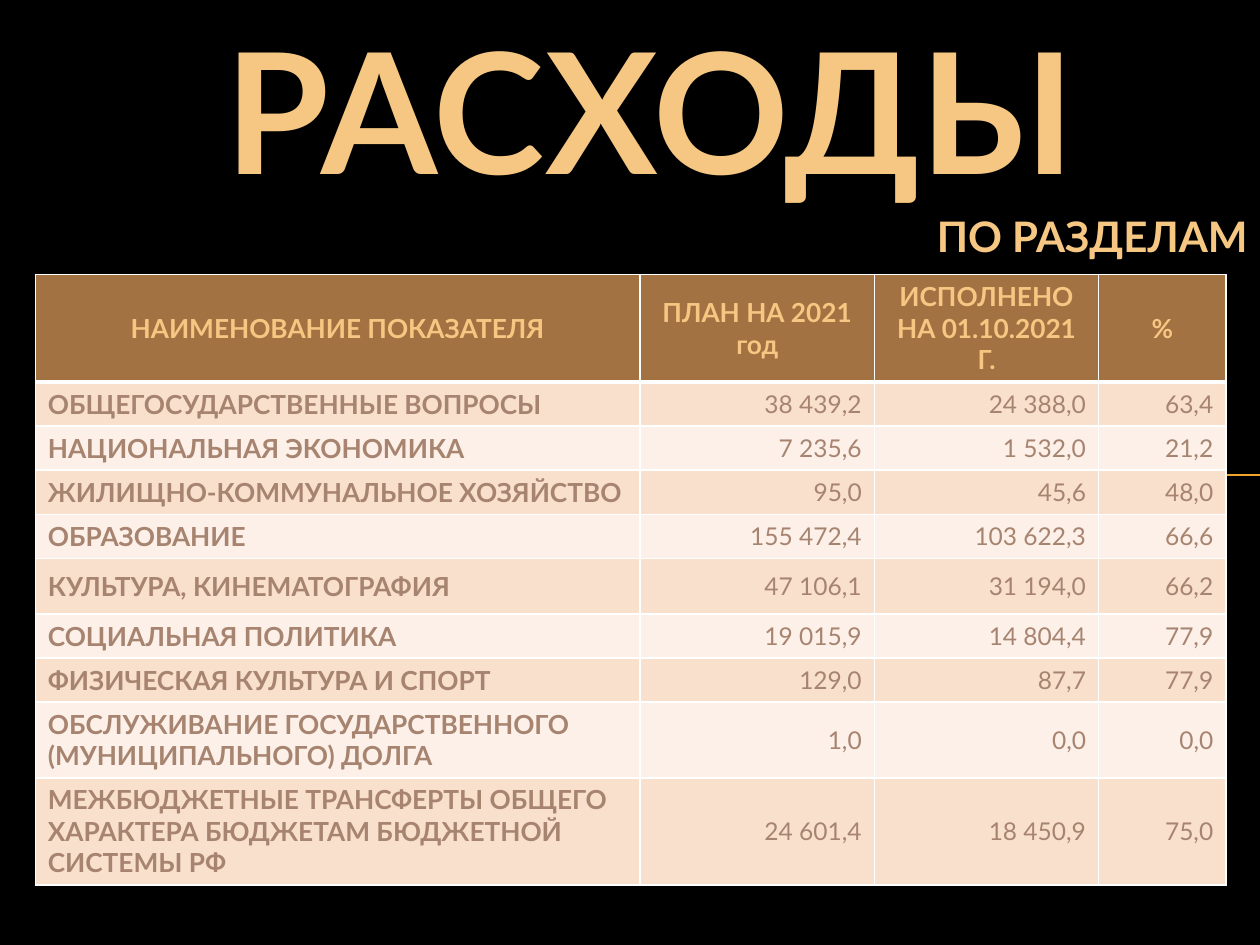
from dataclasses import dataclass

from lxml.etree import SubElement
from pptx import Presentation
from pptx.dml.color import RGBColor
from pptx.enum.shapes import MSO_CONNECTOR
from pptx.enum.text import MSO_ANCHOR, MSO_AUTO_SIZE, PP_ALIGN
from pptx.oxml.ns import qn
from pptx.slide import Slide
from pptx.table import _Cell
from pptx.text.text import TextFrame
from pptx.util import Inches, Pt


@dataclass(frozen=True)
class Theme:
    font: str = "Lato"
    background: str = "000000"
    gold: str = "F6C782"
    rule: str = "F0A22E"
    header_fill: str = "A27242"
    bands: tuple[str, str] = ("F9E0CD", "FCF0E8")
    body_text: str = "A78470"
    border: str = "FFFFFF"
    title_size: int = 96
    subtitle_size: int = 24
    label_size: int = 15
    value_size: int = 14


@dataclass(frozen=True)
class Expense:
    section: str
    plan: str
    done: str
    percent: str
    height: float = 0.35


THEME = Theme()
HEADER = ("НАИМЕНОВАНИЕ ПОКАЗАТЕЛЯ", "ПЛАН НА 2021 год", "ИСПОЛНЕНО НА 01.10.2021 Г.", "%")
HEADER_HEIGHT = 0.85
COLUMN_WIDTHS = (4.8, 1.86, 1.78, 1.01)
EXPENSES = (
    Expense("ОБЩЕГОСУДАРСТВЕННЫЕ ВОПРОСЫ", "38 439,2", "24 388,0", "63,4"),
    Expense("НАЦИОНАЛЬНАЯ ЭКОНОМИКА", "7 235,6", "1 532,0", "21,2"),
    Expense("ЖИЛИЩНО-КОММУНАЛЬНОЕ ХОЗЯЙСТВО", "95,0", "45,6", "48,0"),
    Expense("ОБРАЗОВАНИЕ", "155 472,4", "103 622,3", "66,6"),
    Expense("КУЛЬТУРА, КИНЕМАТОГРАФИЯ", "47 106,1", "31 194,0", "66,2", 0.44),
    Expense("СОЦИАЛЬНАЯ ПОЛИТИКА", "19 015,9", "14 804,4", "77,9"),
    Expense("ФИЗИЧЕСКАЯ КУЛЬТУРА И СПОРТ", "129,0", "87,7", "77,9"),
    Expense("ОБСЛУЖИВАНИЕ ГОСУДАРСТВЕННОГО (МУНИЦИПАЛЬНОГО) ДОЛГА", "1,0", "0,0", "0,0", 0.6),
    Expense("МЕЖБЮДЖЕТНЫЕ ТРАНСФЕРТЫ ОБЩЕГО ХАРАКТЕРА БЮДЖЕТАМ БЮДЖЕТНОЙ СИСТЕМЫ РФ",
            "24 601,4", "18 450,9", "75,0", 0.85),
)


def write(frame: TextFrame, text: str, size: int, color: str,
          align: PP_ALIGN, bold: bool = True) -> None:
    frame.text = text
    frame.word_wrap = True
    for paragraph in frame.paragraphs:
        paragraph.alignment = align
        for run in paragraph.runs:
            run.font.name = THEME.font
            run.font.size = Pt(size)
            run.font.bold = bold
            run.font.color.rgb = RGBColor.from_string(color)


def set_borders(cell: _Cell, top: float = 1, bottom: float = 1) -> None:
    """Draw the cell's edges; call before filling, as the schema puts lines first."""
    properties = cell._tc.get_or_add_tcPr()
    for edge, width in (("lnL", 1), ("lnR", 1), ("lnT", top), ("lnB", bottom)):
        line = SubElement(properties, qn(f"a:{edge}"), w=str(Pt(width)))
        fill = SubElement(line, qn("a:solidFill"))
        SubElement(fill, qn("a:srgbClr"), val=THEME.border)


def fill_cell(cell: _Cell, color: str) -> None:
    cell.vertical_anchor = MSO_ANCHOR.MIDDLE
    cell.fill.solid()
    cell.fill.fore_color.rgb = RGBColor.from_string(color)


def add_rule(slide: Slide) -> None:
    rule = slide.shapes.add_connector(
        MSO_CONNECTOR.STRAIGHT, Inches(0.56), Inches(3.77), Inches(10), Inches(3.77))
    rule.line.color.rgb = RGBColor.from_string(THEME.rule)
    rule.line.width = Pt(0.75)
    SubElement(rule._element.spPr, qn("a:effectLst"))


def add_headings(slide: Slide) -> None:
    title = slide.shapes.title
    title.left, title.top = Inches(0.91), Inches(0)
    title.width, title.height = Inches(8.5), Inches(1.49)
    write(title.text_frame, "РАСХОДЫ", THEME.title_size, THEME.gold, PP_ALIGN.CENTER)
    title.text_frame.auto_size = MSO_AUTO_SIZE.NONE
    title.text_frame.vertical_anchor = MSO_ANCHOR.TOP

    subtitle = slide.shapes.add_textbox(Inches(3.7), Inches(1.62), Inches(6.3), Inches(0.5))
    write(subtitle.text_frame, "ПО РАЗДЕЛАМ", THEME.subtitle_size, THEME.gold, PP_ALIGN.RIGHT)


def add_expense_table(slide: Slide) -> None:
    heights = [HEADER_HEIGHT] + [expense.height for expense in EXPENSES]
    table = slide.shapes.add_table(
        len(heights), len(HEADER), Inches(0.28), Inches(2.18),
        Inches(sum(COLUMN_WIDTHS)), Inches(sum(heights))).table
    for column, width in zip(table.columns, COLUMN_WIDTHS):
        column.width = Inches(width)
    for row, height in zip(table.rows, heights):
        row.height = Inches(height)

    for cell, caption in zip(table.rows[0].cells, HEADER):
        set_borders(cell, bottom=3)
        fill_cell(cell, THEME.header_fill)
        write(cell.text_frame, caption, THEME.label_size, THEME.gold, PP_ALIGN.CENTER)

    for index, expense in enumerate(EXPENSES):
        values = (expense.section, expense.plan, expense.done, expense.percent)
        for column, value in enumerate(values):
            cell = table.cell(index + 1, column)
            set_borders(cell, top=3 if index == 0 else 1)
            fill_cell(cell, THEME.bands[index % 2])
            is_label = column == 0
            write(cell.text_frame, value,
                  THEME.label_size if is_label else THEME.value_size, THEME.body_text,
                  PP_ALIGN.LEFT if is_label else PP_ALIGN.RIGHT, bold=is_label)


def main() -> None:
    presentation = Presentation()
    presentation.slide_width, presentation.slide_height = Inches(10), Inches(7.5)
    slide = presentation.slides.add_slide(presentation.slide_layouts[5])
    slide.background.fill.solid()
    slide.background.fill.fore_color.rgb = RGBColor.from_string(THEME.background)
    add_rule(slide)
    add_headings(slide)
    add_expense_table(slide)
    presentation.save("out.pptx")


if __name__ == "__main__":
    main()
